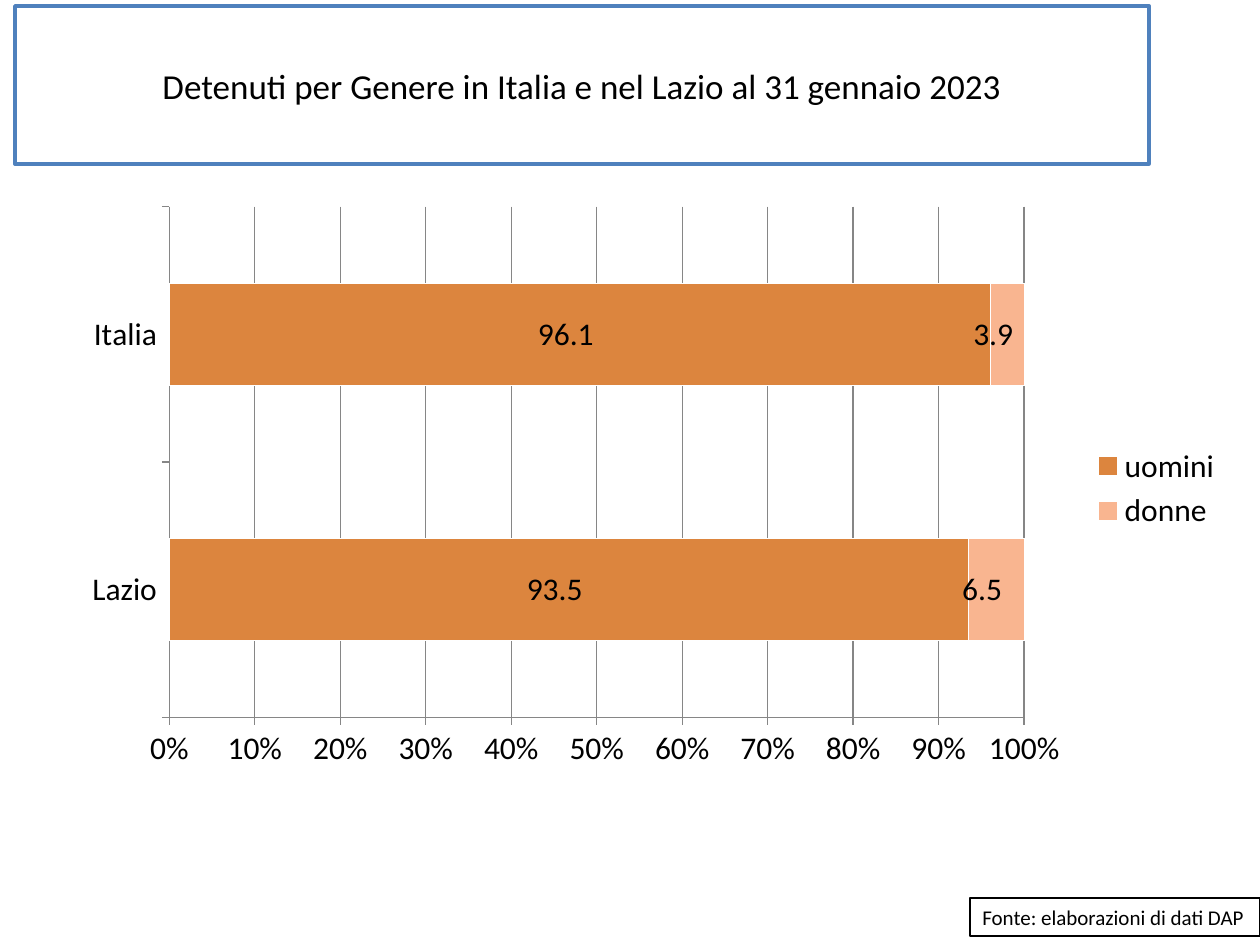
import pptx
import pptx.chart.data
import pptx.dml.color
import pptx.enum.chart
import pptx.enum.shapes
import pptx.enum.text
import pptx.oxml
import pptx.oxml.ns
import pptx.util

RGBColor = pptx.dml.color.RGBColor
BLACK = RGBColor(0x00, 0x00, 0x00)
WHITE = RGBColor(0xFF, 0xFF, 0xFF)
BLUE = RGBColor(0x4F, 0x81, 0xBD)
GRAY = RGBColor(0x86, 0x86, 0x86)
ORANGE = RGBColor(0xDC, 0x85, 0x3E)
PEACH = RGBColor(0xF9, 0xB5, 0x90)

FONT = "Calibri"
EMU_PER_PX = 914400 / 126
LABEL_FORMAT = r"#,##0.0\ _€_-"


def px(length):
    return pptx.util.Emu(round(length * EMU_PER_PX))


def style_font(font, size):
    font.name = FONT
    font.size = pptx.util.Pt(size)
    font.bold = False
    font.color.rgb = BLACK


def fill_frame(frame, text, size, border, border_width, align):
    """Give a box its white fill, border and single line of text."""
    frame.fill.solid()
    frame.fill.fore_color.rgb = WHITE
    frame.line.color.rgb = border
    frame.line.width = pptx.util.Pt(border_width)
    frame.text_frame.vertical_anchor = pptx.enum.text.MSO_ANCHOR.MIDDLE
    paragraph = frame.text_frame.paragraphs[0]
    paragraph.alignment = align
    run = paragraph.add_run()
    run.text = text
    style_font(run.font, size)


def add_heading(slide, left, top, width, height):
    heading = slide.shapes.title
    heading.left, heading.top = px(left), px(top)
    heading.width, heading.height = px(width), px(height)
    fill_frame(heading, "Detenuti per Genere in Italia e nel Lazio al 31 gennaio 2023",
               20, BLUE, 2, pptx.enum.text.PP_ALIGN.CENTER)


def add_credit(slide, left, top, width, height):
    credit = slide.shapes.add_shape(pptx.enum.shapes.MSO_SHAPE.RECTANGLE,
                                    px(left), px(top), px(width), px(height))
    credit.shadow.inherit = False
    credit.text_frame.word_wrap = False
    fill_frame(credit, "Fonte: elaborazioni di dati DAP",
               12, BLACK, 0.75, pptx.enum.text.PP_ALIGN.LEFT)


def place_plot(chart, x, y, w, h):
    """Fix the inner plot area, as fractions of the chart box."""
    plot_area = chart.plots[0]._element.getparent()
    for layout in plot_area.findall(pptx.oxml.ns.qn("c:layout")):
        plot_area.remove(layout)
    plot_area.insert(0, pptx.oxml.parse_xml(
        f'<c:layout {pptx.oxml.ns.nsdecls("c")}><c:manualLayout>'
        '<c:layoutTarget val="inner"/><c:xMode val="edge"/><c:yMode val="edge"/>'
        f'<c:x val="{x}"/><c:y val="{y}"/><c:w val="{w}"/><c:h val="{h}"/>'
        '</c:manualLayout></c:layout>'))


def add_gender_chart(slide, left, top, width, height):
    shares = pptx.chart.data.CategoryChartData()
    shares.categories = ["Lazio", "Italia"]
    shares.add_series("uomini", [93.5, 96.1])
    shares.add_series("donne", [6.5, 3.9])
    chart = slide.shapes.add_chart(pptx.enum.chart.XL_CHART_TYPE.BAR_STACKED_100,
                                   px(left), px(top), px(width), px(height), shares).chart
    style_font(chart.font, 18)
    chart.has_title = False
    chart.has_legend = True
    chart.legend.position = pptx.enum.chart.XL_LEGEND_POSITION.RIGHT
    chart.legend.include_in_layout = False
    place_plot(chart, 0.09, 0.02, 0.73, 0.87)

    bars = chart.plots[0]
    bars.gap_width = 150
    bars.overlap = 100
    bars.vary_by_categories = False
    for series, color in zip(bars.series, (ORANGE, PEACH)):
        series.format.fill.solid()
        series.format.fill.fore_color.rgb = color
        series.format.line.color.rgb = WHITE
        labels = series.data_labels
        labels.show_value = True
        labels.number_format = LABEL_FORMAT
        labels.number_format_is_linked = False
        labels.position = pptx.enum.chart.XL_LABEL_POSITION.CENTER
        style_font(labels.font, 18)

    for axis in (chart.category_axis, chart.value_axis):
        axis.major_tick_mark = pptx.enum.chart.XL_TICK_MARK.OUTSIDE
        axis.format.line.color.rgb = GRAY
        style_font(axis.tick_labels.font, 18)
    percent = chart.value_axis
    percent.minimum_scale = 0
    percent.has_major_gridlines = True
    percent.major_gridlines.format.line.color.rgb = GRAY
    percent.tick_labels.number_format = "0%"
    percent.tick_labels.number_format_is_linked = False


def main():
    deck = pptx.Presentation()
    deck.slide_width, deck.slide_height = px(1260), px(945)
    slide = deck.slides.add_slide(deck.slide_layouts[5])
    add_heading(slide, 15, 6, 1134, 158)
    add_credit(slide, 970, 898, 290, 38)
    add_gender_chart(slide, 64, 195, 1171, 587)
    deck.save("out.pptx")


if __name__ == "__main__":
    main()
